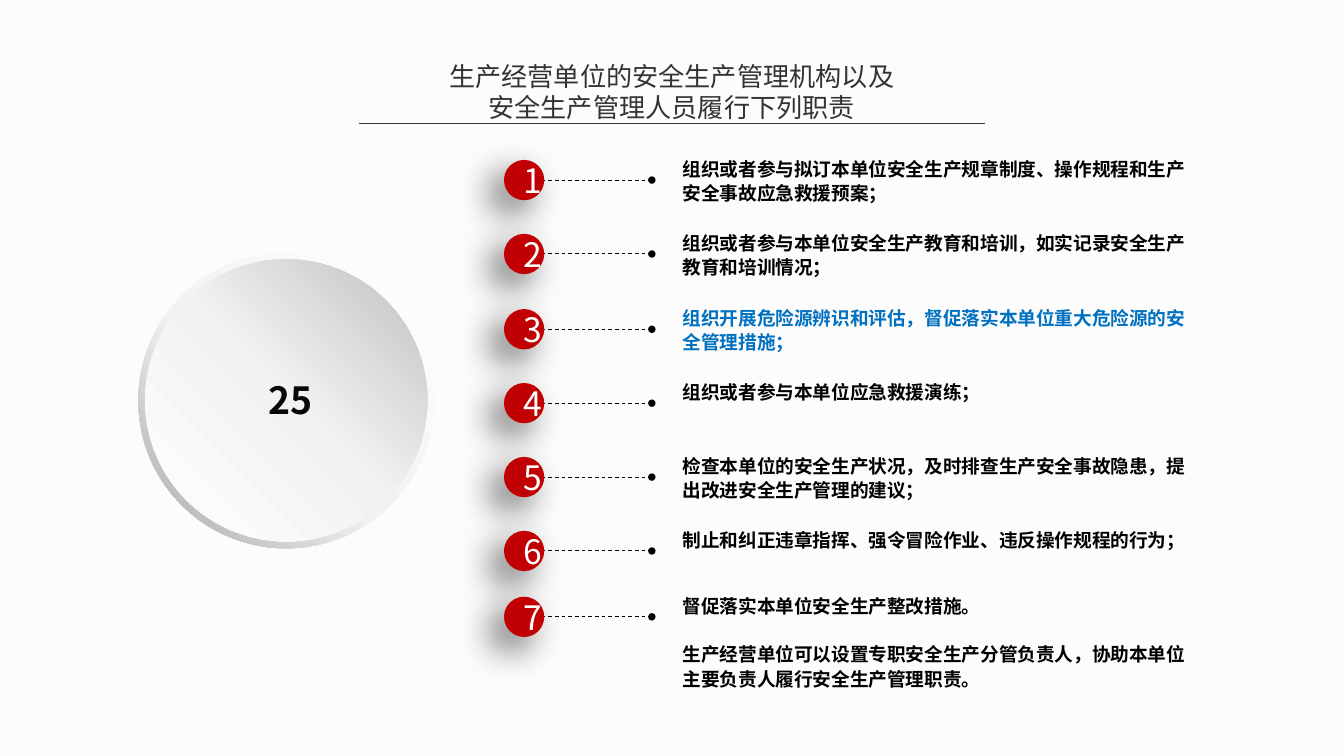
from dataclasses import dataclass

from lxml import etree
from pptx import Presentation
from pptx import util as u
from pptx.dml.color import RGBColor
from pptx.enum import dml, shapes, text
from pptx.oxml.ns import qn


@dataclass(frozen=True)
class Theme:
    font: str = "Noto Sans CJK SC"
    background: str = "FCFCFC"
    heading: str = "333333"
    ink: str = "000000"
    number: str = "080808"
    accent: str = "0070C0"
    badge: str = "C00002"
    white: str = "FFFFFF"
    rim: tuple = ((0, "FFFFFF"), (55, "F2F2F2"), (100, "A6A6A6"))
    face: tuple = ((0, "FFFFFF"), (51, "F2F2F2"), (100, "BFBFBF"))
    title_size: int = 14
    body_size: int = 10
    badge_size: int = 18
    number_size: int = 20


theme = Theme()


def write(box, words, size, color, bold=False, align=text.PP_ALIGN.LEFT,
          anchor=text.MSO_ANCHOR.TOP, inset=None, leading=None, gap=0):
    """Fill a shape with text, one paragraph per line of words."""
    frame = box.text_frame
    frame.word_wrap = True
    frame.vertical_anchor = anchor
    if inset is not None:
        frame.margin_left = frame.margin_right = u.Inches(inset)
        frame.margin_top = frame.margin_bottom = u.Inches(inset)
    for index, line in enumerate(words.split("\n")):
        para = frame.add_paragraph() if index else frame.paragraphs[0]
        para.alignment = align
        if leading:
            para.line_spacing = u.Pt(leading)
        if index:
            para.space_before = u.Pt(gap)
        span = para.add_run()
        span.text = line
        span.font.name = theme.font
        span.font.size = u.Pt(size)
        span.font.bold = bold
        span.font.color.rgb = RGBColor.from_string(color)
        etree.SubElement(span.font._element, qn("a:ea"), typeface=theme.font)


# A 16:9 page
deck = Presentation()
deck.slide_width = u.Inches(10)
deck.slide_height = u.Inches(10) * 9 // 16
page = deck.slides.add_slide(deck.slide_layouts[5])
page.background.fill.solid()
page.background.fill.fore_color.rgb = RGBColor.from_string(theme.background)

# Title and its rule
title = page.shapes.title
title.left, title.top = u.Inches(3.16), u.Inches(0.4)
title.width, title.height = u.Inches(3.68), u.Inches(0.57)
write(title, "生产经营单位的安全生产管理机构以及安全生产管理人员履行下列职责",
      theme.title_size, theme.heading, align=text.PP_ALIGN.CENTER, leading=16.7)
title.text_frame.auto_size = text.MSO_AUTO_SIZE.NONE
title.text_frame.margin_top = u.Inches(0.05)

rule = page.shapes.add_connector(shapes.MSO_CONNECTOR.STRAIGHT, u.Inches(2.67),
                                 u.Inches(0.92), u.Inches(7.33), u.Inches(0.92))
rule.line.color.rgb = RGBColor.from_string(theme.heading)
rule.line.width = u.Pt(0.75)
etree.SubElement(rule._element.spPr, qn("a:effectLst"))

# Large disc: rim and face
disc = page.shapes.add_group_shape()
for kind, left, top, size, stops, angle in (
    (shapes.MSO_SHAPE.DONUT, 1.03, 1.88, 2.2, theme.rim, 225),
    (shapes.MSO_SHAPE.OVAL, 1.08, 1.93, 2.1, theme.face, 45),
):
    part = disc.shapes.add_shape(kind, u.Inches(left), u.Inches(top),
                                 u.Inches(size), u.Inches(size))
    if kind == shapes.MSO_SHAPE.DONUT:
        part.adjustments[0] = 0.05
    part.shadow.inherit = False
    part.line.fill.background()
    part.fill.gradient()
    part.fill.gradient_angle = angle
    stop_list = part._element.spPr.find(".//" + qn("a:gsLst"))
    for stop in list(stop_list):
        stop_list.remove(stop)
    for position, color in stops:
        stop = etree.SubElement(stop_list, qn("a:gs"), pos=str(position * 1000))
        etree.SubElement(stop, qn("a:srgbClr"), val=color)

# Duties: centre height, text box height, wording
duties = (
    (1.34, 0.36, "组织或者参与拟订本单位安全生产规章制度、操作规程和生产安全事故应急救援预案；"),
    (1.89, 0.53, "组织或者参与本单位安全生产教育和培训，如实记录安全生产教育和培训情况；"),
    (2.45, 0.53, "组织开展危险源辨识和评估，督促落实本单位重大危险源的安全管理措施；"),
    (3.0, 0.17, "组织或者参与本单位应急救援演练；"),
    (3.55, 0.36, "检查本单位的安全生产状况，及时排查生产安全事故隐患，提出改进安全生产管理的建议；"),
    (4.1, 0.36, "制止和纠正违章指挥、强令冒险作业、违反操作规程的行为；"),
    (4.59, 0.72, "督促落实本单位安全生产整改措施。\n"
                 "生产经营单位可以设置专职安全生产分管负责人，协助本单位主要负责人履行安全生产管理职责。"),
)
badge_size = 0.3
highlighted = 3

for number, (middle, height, duty) in enumerate(duties, start=1):
    # Wording
    box = page.shapes.add_textbox(u.Inches(5.08), u.Inches(middle - 0.18),
                                  u.Inches(3.78), u.Inches(height))
    write(box, duty, theme.body_size,
          theme.accent if number == highlighted else theme.ink,
          bold=True, inset=0, leading=13, gap=13)

    # Dashed leader with a small round end
    leader = page.shapes.add_connector(
        shapes.MSO_CONNECTOR.STRAIGHT, u.Inches(3.98), u.Inches(middle),
        u.Inches(4.85), u.Inches(middle))
    leader.line.color.rgb = RGBColor.from_string(theme.ink)
    leader.line.width = u.Pt(0.5)
    leader.line.dash_style = dml.MSO_LINE.DASH
    etree.SubElement(leader.line._get_or_add_ln(), qn("a:tailEnd"),
                     type="oval", w="sm", len="sm")
    etree.SubElement(leader._element.spPr, qn("a:effectLst"))

    # Numbered badge with a soft shadow
    badge = page.shapes.add_shape(
        shapes.MSO_SHAPE.OVAL, u.Inches(3.75), u.Inches(middle - badge_size / 2),
        u.Inches(badge_size), u.Inches(badge_size))
    badge.fill.solid()
    badge.fill.fore_color.rgb = RGBColor.from_string(theme.badge)
    badge.line.fill.background()
    badge.shadow.inherit = False
    effects = badge._element.spPr.find(qn("a:effectLst"))
    shadow = etree.SubElement(effects, qn("a:outerShdw"), blurRad=str(u.Pt(20)),
                              dist=str(u.Pt(10)), dir=str(135 * 60000),
                              algn="tr", rotWithShape="0")
    tint = etree.SubElement(shadow, qn("a:srgbClr"), val=theme.ink)
    etree.SubElement(tint, qn("a:alpha"), val="60000")
    write(badge, str(number), theme.badge_size, theme.white,
          align=text.PP_ALIGN.CENTER, anchor=text.MSO_ANCHOR.MIDDLE)

# Number on the disc
article = page.shapes.add_textbox(u.Inches(1.4), u.Inches(2.81),
                                  u.Inches(1.53), u.Inches(0.34))
write(article, "25", theme.number_size, theme.number, bold=True,
      align=text.PP_ALIGN.CENTER, inset=0)

deck.save("out.pptx")
